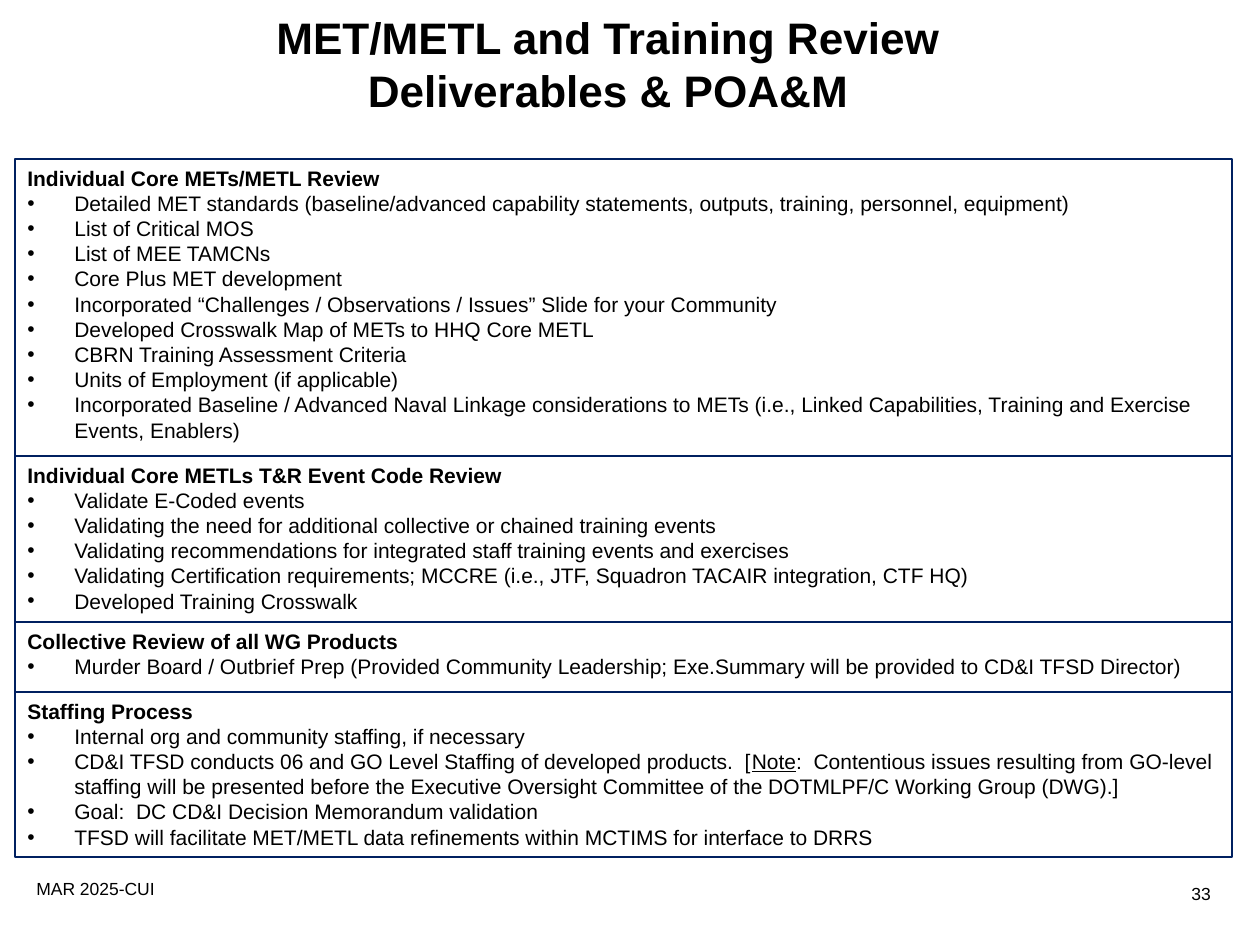
from pptx import Presentation
from pptx.dml.color import RGBColor
from pptx.enum.shapes import MSO_SHAPE
from pptx.enum.text import MSO_ANCHOR, MSO_AUTO_SIZE, PP_ALIGN
from pptx.oxml.ns import qn
from pptx.util import Pt
from lxml.etree import SubElement

SCALE = 914400 / 126
INDENT = 47

SECTIONS = [
    (297, "Individual Core METs/METL Review", [
        "Detailed MET standards (baseline/advanced capability statements, outputs, training, personnel, equipment)",
        "List of Critical MOS",
        "List of MEE TAMCNs",
        "Core Plus MET development",
        "Incorporated “Challenges / Observations / Issues” Slide for your Community",
        "Developed Crosswalk Map of METs to HHQ Core METL",
        "CBRN Training Assessment Criteria",
        "Units of Employment (if applicable)",
        "Incorporated Baseline / Advanced Naval Linkage considerations to METs (i.e., Linked Capabilities, Training and Exercise Events, Enablers)",
    ]),
    (166, "Individual Core METLs T&R Event Code Review", [
        "Validate E-Coded events",
        "Validating the need for additional collective or chained training events",
        "Validating recommendations for integrated staff training events and exercises",
        "Validating Certification requirements; MCCRE (i.e., JTF, Squadron TACAIR integration, CTF HQ)",
        "Developed Training Crosswalk",
    ]),
    (70, "Collective Review of all WG Products", [
        "Murder Board / Outbrief Prep (Provided Community Leadership; Exe.Summary will be provided to CD&I TFSD Director)",
    ]),
    (165, "Staffing Process", [
        "Internal org and community staffing, if necessary",
        ("CD&I TFSD conducts 06 and GO Level Staffing of developed products.  [",
         "Note",
         ":  Contentious issues resulting from GO-level staffing will be presented before the Executive Oversight Committee of the DOTMLPF/C Working Group (DWG).]"),
        "Goal:  DC CD&I Decision Memorandum validation",
        "TFSD will facilitate MET/METL data refinements within MCTIMS for interface to DRRS",
    ]),
]


def px(n):
    return round(n * SCALE)


def rgb(value):
    return RGBColor.from_string(value)


def set_attrs(obj, values):
    for name, value in values.items():
        setattr(obj, name, value)


def add_run(p, text, size, **extra):
    r = p.add_run()
    r.text = text
    set_attrs(r.font, {"name": "Arial", "size": Pt(size), "bold": False, **extra})
    r.font.color.rgb = rgb("000000")


def add_bullet(p):
    pPr = p._p.get_or_add_pPr()
    pPr.set("marL", str(px(INDENT)))
    pPr.set("indent", str(-px(INDENT)))
    SubElement(pPr, qn("a:buFont")).set("typeface", "Arial")
    SubElement(pPr, qn("a:buChar")).set("char", "•")


def add_title(s, x, y, w, h):
    sp = s.shapes.title
    set_attrs(sp, {"left": px(x), "top": px(y), "width": px(w), "height": px(h)})
    tf = sp.text_frame
    set_attrs(tf, {"vertical_anchor": MSO_ANCHOR.MIDDLE, "word_wrap": True,
                   "auto_size": MSO_AUTO_SIZE.NONE})
    p = tf.paragraphs[0]
    p.alignment = PP_ALIGN.CENTER
    add_run(p, "MET/METL and Training Review Deliverables & POA&M", 25.2, bold=True)


def add_section(s, x, y, w, h, heading, items):
    sp = s.shapes.add_shape(MSO_SHAPE.RECTANGLE, px(x), px(y), px(w), px(h))
    sp.shadow.inherit = False
    sp.fill.solid()
    sp.fill.fore_color.rgb = rgb("FFFFFF")
    sp.line.color.rgb = rgb("002060")
    sp.line.width = Pt(0.75)
    tf = sp.text_frame
    set_attrs(tf, {"vertical_anchor": MSO_ANCHOR.TOP, "word_wrap": True})
    p = tf.paragraphs[0]
    p.alignment = PP_ALIGN.LEFT
    add_run(p, heading, 12, bold=True)
    for item in items:
        p = tf.add_paragraph()
        p.alignment = PP_ALIGN.LEFT
        add_bullet(p)
        parts = (item,) if isinstance(item, str) else item
        for i, part in enumerate(parts):
            add_run(p, part, 12, underline=i == 1)


def add_sections(s, x, y, w):
    for h, heading, items in SECTIONS:
        add_section(s, x, y, w, h, heading, items)
        y += h


def add_label(s, x, y, w, h, text):
    tf = s.shapes.add_textbox(px(x), px(y), px(w), px(h)).text_frame
    tf.word_wrap = True
    add_run(tf.paragraphs[0], text, 10)


def add_footer(s, x, y, w):
    add_label(s, x + w - 57, y + 5, 57, 50, "33")
    add_label(s, x, y, 396, 50, "MAR 2025-CUI")


def main():
    prs = Presentation()
    set_attrs(prs, {"slide_width": px(1260), "slide_height": px(945)})
    s = prs.slides.add_slide(prs.slide_layouts[5])
    add_title(s, 135, 0, 946, 126)
    add_sections(s, 15, 159, 1217)
    add_footer(s, 24, 872, 1212)
    prs.save("out.pptx")


if __name__ == "__main__":
    main()
